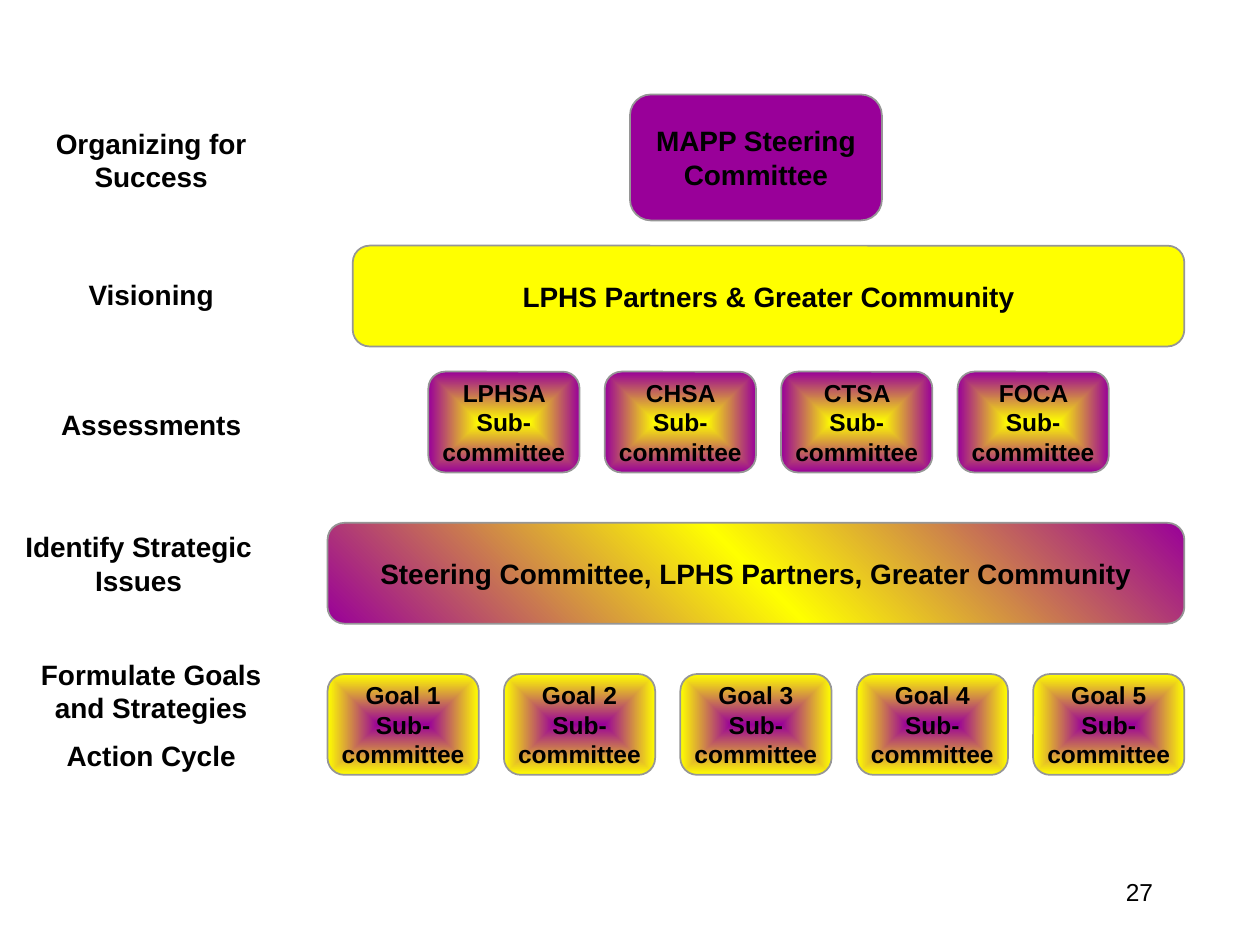
from pptx import Presentation, util as u
from pptx.enum import shapes, text
from pptx.oxml import parse_xml
from pptx.oxml.ns import nsdecls
from pptx.dml.color import RGBColor

COLORS = {"purple": "990099", "yellow": "FFFF00", "outline": "969696", "text": "000000"}

CENTRE_GLOW = '<a:path path="shape"><a:fillToRect l="50000" t="50000" r="50000" b="50000"/></a:path>'
DIAGONAL = '<a:lin ang="18900000" scaled="1"/>'
FILLS = {
    "steering": (["purple"], None),
    "community": (["yellow"], None),
    "assessment": (["yellow", "purple"], CENTRE_GLOW),
    "goal": (["purple", "yellow"], CENTRE_GLOW),
    "everyone": (["purple", "yellow", "purple"], DIAGONAL),
}

# Phase labels: left, top, width, height, paragraphs
PHASES = [
    (0.2, 0.95, 2, 0.64, ["Organizing for Success"]),
    (0.2, 2.15, 2, 0.37, ["Visioning"]),
    (0.2, 3.18, 2, 0.37, ["Assessments"]),
    (0, 4.15, 2.2, 0.64, ["Identify Strategic Issues"]),
    (0, 5.15, 2.4, 1.04, ["Formulate Goals and Strategies", "Action Cycle"]),
]

# Rows of groups: left, top, box width, box height, fill, text size, names
GAP = 0.2
GROUP_ROWS = [
    (5, 0.75, 2, 1, "steering", 16, ["MAPP Steering Committee"]),
    (2.8, 1.95, 6.6, 0.8, "community", 16, ["LPHS Partners & Greater Community"]),
    (3.4, 2.95, 1.2, 0.8, "assessment", 14,
     [f"{name} Sub-committee" for name in ("LPHSA", "CHSA", "CTSA", "FOCA")]),
    (2.6, 4.15, 6.8, 0.8, "everyone", 16,
     ["Steering Committee, LPHS Partners, Greater Community"]),
    (2.6, 5.35, 1.2, 0.8, "goal", 14,
     [f"Goal {number} Sub-committee" for number in range(1, 6)]),
]
PAGE_NUMBER = (7.17, 6.83, 2.08, 0.5, ["27"])


def write(shape, paragraphs, size=16, bold=True, align=text.PP_ALIGN.CENTER, side=0.15):
    frame = shape.text_frame
    frame_format = {
        "word_wrap": True, "vertical_anchor": text.MSO_ANCHOR.MIDDLE,
        "margin_left": u.Inches(side), "margin_right": u.Inches(side),
        "margin_top": 0, "margin_bottom": 0,
    }
    for name, value in frame_format.items():
        setattr(frame, name, value)
    font_format = {"name": "Arial", "size": u.Pt(size), "bold": bold}
    for index, content in enumerate(paragraphs):
        paragraph = frame.paragraphs[0] if index == 0 else frame.add_paragraph()
        paragraph.text = content
        paragraph.alignment = align
        if index:
            paragraph.space_before = u.Pt(size / 2)
        for name, value in font_format.items():
            setattr(paragraph.font, name, value)
        paragraph.font.color.rgb = RGBColor.from_string(COLORS["text"])


def paint(shape, names, direction):
    """Fill with one colour, or with evenly spaced gradient stops."""
    if direction is None:
        shape.fill.solid()
        shape.fill.fore_color.rgb = RGBColor.from_string(COLORS[names[0]])
        return
    step = 100000 // (len(names) - 1)
    stops = "".join(
        f'<a:gs pos="{index * step}"><a:srgbClr val="{COLORS[name]}"/></a:gs>'
        for index, name in enumerate(names))
    shape._element.spPr.append(parse_xml(
        f'<a:gradFill {nsdecls("a")} rotWithShape="1">'
        f"<a:gsLst>{stops}</a:gsLst>{direction}</a:gradFill>"))


def add_group(slide, box, fill, size, name):
    shape = slide.shapes.add_shape(
        shapes.MSO_SHAPE.FLOWCHART_ALTERNATE_PROCESS, *map(u.Inches, box))
    paint(shape, *FILLS[fill])
    shape.line.color.rgb = RGBColor.from_string(COLORS["outline"])
    shape.line.width = u.Pt(1)
    shape.shadow.inherit = False
    write(shape, [name], size, side=0.06)


def add_text(slide, left, top, width, height, paragraphs, **style):
    box = slide.shapes.add_textbox(*map(u.Inches, (left, top, width, height)))
    write(box, paragraphs, **style)


def main():
    presentation = Presentation()
    presentation.slide_width, presentation.slide_height = u.Inches(10), u.Inches(7.5)
    slide = presentation.slides.add_slide(presentation.slide_layouts[6])
    for left, top, width, height, fill, size, names in GROUP_ROWS:
        for column, name in enumerate(names):
            box = (left + column * (width + GAP), top, width, height)
            add_group(slide, box, fill, size, name)
    for phase in PHASES:
        add_text(slide, *phase)
    add_text(slide, *PAGE_NUMBER, size=14, bold=False, align=text.PP_ALIGN.RIGHT, side=0.1)
    presentation.save("out.pptx")


if __name__ == "__main__":
    main()
